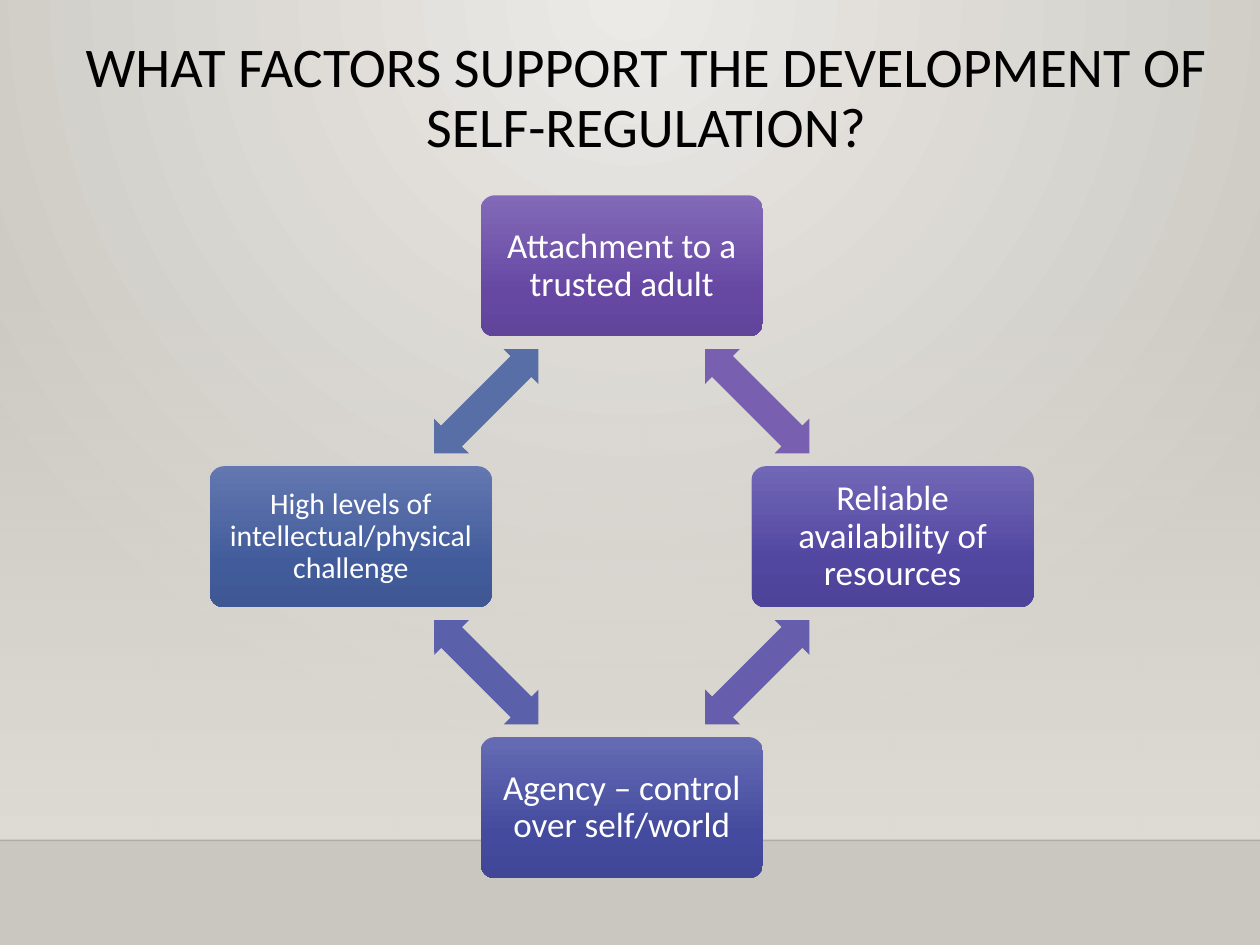
import math
from lxml import etree
from pptx import Presentation
from pptx.dml.color import RGBColor
from pptx.enum.dml import MSO_THEME_COLOR
from pptx.enum.shapes import MSO_CONNECTOR, MSO_SHAPE
from pptx.enum.text import MSO_ANCHOR, PP_ALIGN
from pptx.oxml import parse_xml
from pptx.oxml.ns import nsdecls, qn
from pptx.util import Inches, Pt

RECT, ROUNDED = MSO_SHAPE.RECTANGLE, MSO_SHAPE.ROUNDED_RECTANGLE
DOUBLE_ARROW = MSO_SHAPE.LEFT_RIGHT_ARROW
STRAIGHT = MSO_CONNECTOR.STRAIGHT
TOP, MIDDLE = MSO_ANCHOR.TOP, MSO_ANCHOR.MIDDLE
CENTER = PP_ALIGN.CENTER

W, H = 10, 7.5
FLOOR = 6.67
DOWN = '<a:lin ang="5400000" scaled="0"/>'
SPOTLIGHT = ('<a:path path="circle">'
             '<a:fillToRect l="43000" t="0" r="43000" b="100000"/></a:path>')

# text, text size, inset, gradient from top to bottom, colour of the arrow that follows
FACTORS = [
    ("Attachment to a trusted adult", 20, 0.08,
     ("836AB8", "6648A3", "60459A"), "795FAF"),
    ("Reliable availability of resources", 20, 0.08,
     ("7167B6", "5146A0", "4D4398"), "665DAC"),
    ("Agency – control over self/world", 20, 0.08,
     ("656BB3", "444B9E", "414796"), "5A60A9"),
    ("High levels of intellectual/physical challenge", 17, 0.07,
     ("6378B0", "425B9B", "3F5793"), "586EA6"),
]


def rgb(value):
    return RGBColor.from_string(value)


def set_gradient(fill, parent, stops, direction):
    """Fill with (percent, colour, opacity percent) stops."""
    fill.solid()
    fill.fore_color.rgb = rgb(stops[0][1])
    gs = "".join(
        f'<a:gs pos="{pos * 1000}"><a:srgbClr val="{color}">'
        f'<a:alpha val="{opacity * 1000}"/></a:srgbClr></a:gs>'
        for pos, color, opacity in stops)
    solid = next(parent.iter(qn("a:solidFill")))
    solid.getparent().replace(solid, parse_xml(
        f'<a:gradFill {nsdecls("a")} rotWithShape="1">'
        f'<a:gsLst>{gs}</a:gsLst>{direction}</a:gradFill>'))


def add_shape(s, kind, x, y, w, h):
    sp = s.shapes.add_shape(kind, Inches(x), Inches(y), Inches(w), Inches(h))
    sp.shadow.inherit = False
    sp.line.fill.background()
    return sp


def write(sp, text, size, color, anchor, inset=None):
    tf = sp.text_frame
    tf.word_wrap = True
    tf.vertical_anchor = anchor
    if inset is not None:
        for side in ("left", "right", "top", "bottom"):
            setattr(tf, f"margin_{side}", Inches(inset))
    p = tf.paragraphs[0]
    p.alignment, p.line_spacing = CENTER, 0.9
    r = p.add_run()
    r.text = text
    for name, value in {"name": "Calibri", "size": Pt(size)}.items():
        setattr(r.font, name, value)
    r.font.color.rgb = rgb(color)


def add_backdrop(s):
    set_gradient(s.background.fill, s.background._cSld,
                 [(0, "ECEAE7", 100), (100, "CAC7C1", 100)], SPOTLIGHT)
    wall = add_shape(s, RECT, 0, 2.2, W, FLOOR - 2.2)
    set_gradient(wall.fill, wall._element.spPr,
                 [(0, "DFDBD5", 0), (100, "DFDBD5", 100)], DOWN)
    edge = s.shapes.add_connector(STRAIGHT, 0, Inches(FLOOR), Inches(W), Inches(FLOOR))
    edge.line.width = Pt(1)
    edge.line.color.rgb = rgb("000001")
    props = edge._element.spPr
    color = next(props.iter(qn("a:srgbClr")))
    etree.SubElement(color, qn("a:alpha"), val="20000")
    etree.SubElement(props, qn("a:effectLst"))


def add_title(s, x, y, w, h):
    sp = s.shapes.add_textbox(Inches(x), Inches(y), Inches(w), Inches(h))
    write(sp, "WHAT FACTORS SUPPORT THE DEVELOPMENT OF SELF-REGULATION?",
          32, "000000", TOP)


def add_cycle(s, x, y, w, h):
    """Factors clockwise from the top, with a double arrow between neighbours."""
    node_w, node_h = 2.24, 1.12
    arrow_w, arrow_h = 1.17, 0.39
    cx, cy = x + w / 2, y + h / 2
    radius = (h - node_h) / 2
    for i, (text, size, inset, colors, arrow_color) in enumerate(FACTORS):
        angle = math.radians(90 * i)
        nx, ny = cx + radius * math.sin(angle), cy - radius * math.cos(angle)
        node = add_shape(s, ROUNDED, nx - node_w / 2, ny - node_h / 2, node_w, node_h)
        node.adjustments[0] = 0.1
        stops = [(pos, color, 100) for pos, color in zip((0, 69, 100), colors)]
        set_gradient(node.fill, node._element.spPr, stops, DOWN)
        write(node, text, size, "FFFFFF", MIDDLE, inset)

        angle += math.radians(45)
        reach = radius / math.sqrt(2)
        ax, ay = cx + reach * math.sin(angle), cy - reach * math.cos(angle)
        arrow = add_shape(s, DOUBLE_ARROW, ax - arrow_w / 2, ay - arrow_h / 2,
                          arrow_w, arrow_h)
        arrow.adjustments[0], arrow.adjustments[1] = 0.6, 0.5
        arrow.rotation = 45 + 90 * i
        arrow.fill.solid()
        arrow.fill.fore_color.rgb = rgb(arrow_color)


def main():
    prs = Presentation()
    prs.slide_width, prs.slide_height = Inches(W), Inches(H)
    s = prs.slides.add_slide(prs.slide_layouts[6])
    add_backdrop(s)
    add_title(s, 0.38, 0.26, 9.5, 0.81)
    add_cycle(s, 1.66, 1.55, 6.55, 5.42)
    prs.save("out.pptx")


if __name__ == "__main__":
    main()
